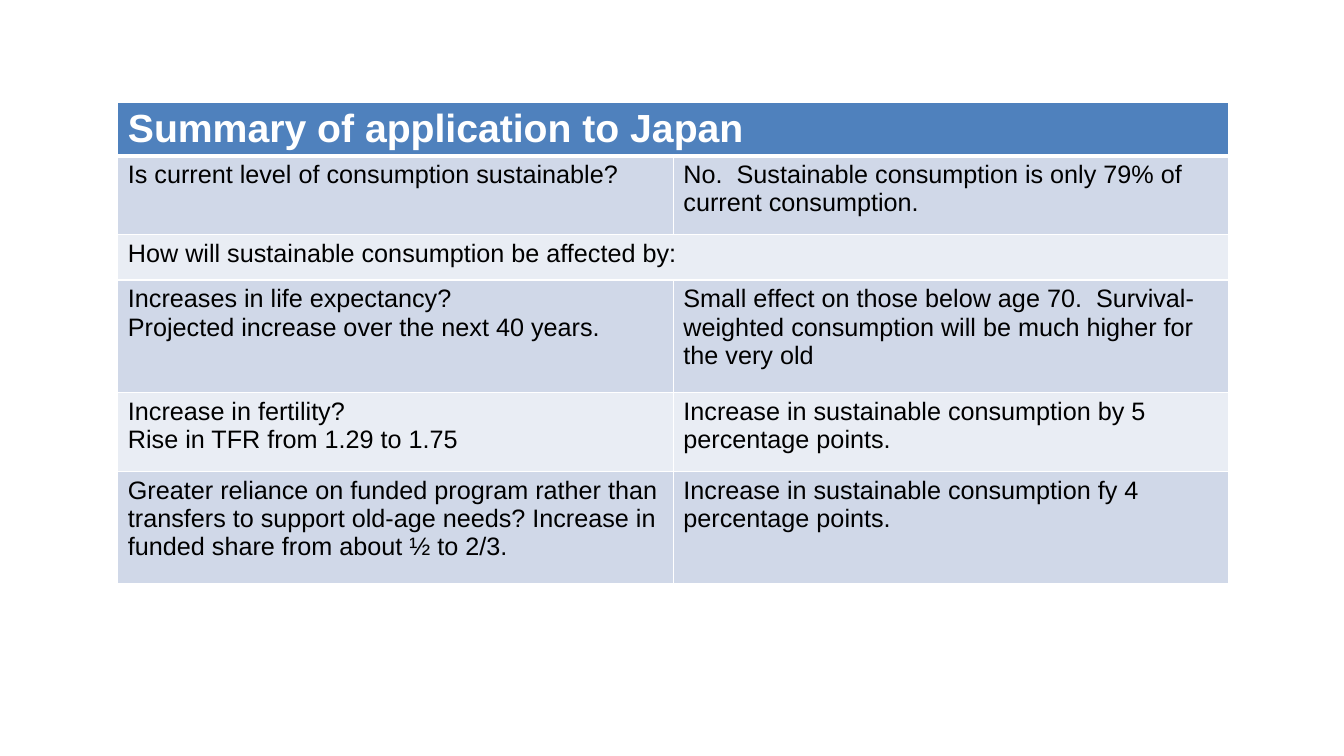
from dataclasses import dataclass

from lxml import etree
from pptx import Presentation
from pptx import util as u
from pptx.dml.color import RGBColor
from pptx.oxml import ns


@dataclass(frozen=True)
class Theme:
    font: str = "Arial"
    title_size: int = 28
    body_size: int = 18
    title_text: str = "FFFFFF"
    body_text: str = "000000"
    title_fill: str = "4F81BD"
    bands: tuple = ("E9EDF4", "D0D8E8")
    border: str = "FFFFFF"
    thin: float = 1
    thick: float = 3


theme = Theme()


def add_border(cell, side, points):
    """Rule one side (L, R, T or B) of a cell; call before setting its fill."""
    line = etree.SubElement(cell._tc.get_or_add_tcPr(), ns.qn(f"a:ln{side}"), w=str(u.Pt(points)))
    fill = etree.SubElement(line, ns.qn("a:solidFill"))
    etree.SubElement(fill, ns.qn("a:srgbClr"), val=theme.border)


# Row height in cm, then the question and its answer; one text spans both columns
summary = [
    (1.15, "Summary of application to Japan"),
    (1.98, "Is current level of consumption sustainable?",
     "No.  Sustainable consumption is only 79% of current consumption."),
    (1.15, "How will sustainable consumption be affected by:"),
    (2.84, "Increases in life expectancy?\nProjected increase over the next 40 years.",
     "Small effect on those below age 70.  Survival-weighted consumption will be "
     "much higher for the very old"),
    (1.98, "Increase in fertility?\nRise in TFR from 1.29 to 1.75",
     "Increase in sustainable consumption by 5 percentage points."),
    (2.84, "Greater reliance on funded program rather than transfers to support "
     "old-age needs? Increase in funded share from about ½ to 2/3.",
     "Increase in sustainable consumption fy 4 percentage points."),
]

deck = Presentation()
deck.slide_width, deck.slide_height = u.Cm(33.87), u.Cm(19.05)
slide = deck.slides.add_slide(deck.slide_layouts[6])

total_height = sum(height for height, *_ in summary)
table = slide.shapes.add_table(
    len(summary), 2, u.Cm(2.97), u.Cm(2.57), u.Cm(28), u.Cm(total_height)).table

for row, (height, *texts) in enumerate(summary):
    table.rows[row].height = u.Cm(height)
    is_title = row == 0
    fill = theme.title_fill if is_title else theme.bands[row % 2]
    color = theme.title_text if is_title else theme.body_text

    for cell in table.rows[row].cells:
        for side in "LRTB":
            under_title = (row, side) in ((0, "B"), (1, "T"))
            add_border(cell, side, theme.thick if under_title else theme.thin)
        cell.fill.solid()
        cell.fill.fore_color.rgb = RGBColor.from_string(fill)

    if len(texts) == 1:
        table.cell(row, 0).merge(table.cell(row, 1))

    for column, words in enumerate(texts):
        frame = table.cell(row, column).text_frame
        frame.text = words
        for paragraph in frame.paragraphs:
            for run in paragraph.runs:
                run.font.name = theme.font
                run.font.size = u.Pt(theme.title_size if is_title else theme.body_size)
                run.font.bold = is_title
                run.font.color.rgb = RGBColor.from_string(color)

deck.save("out.pptx")
